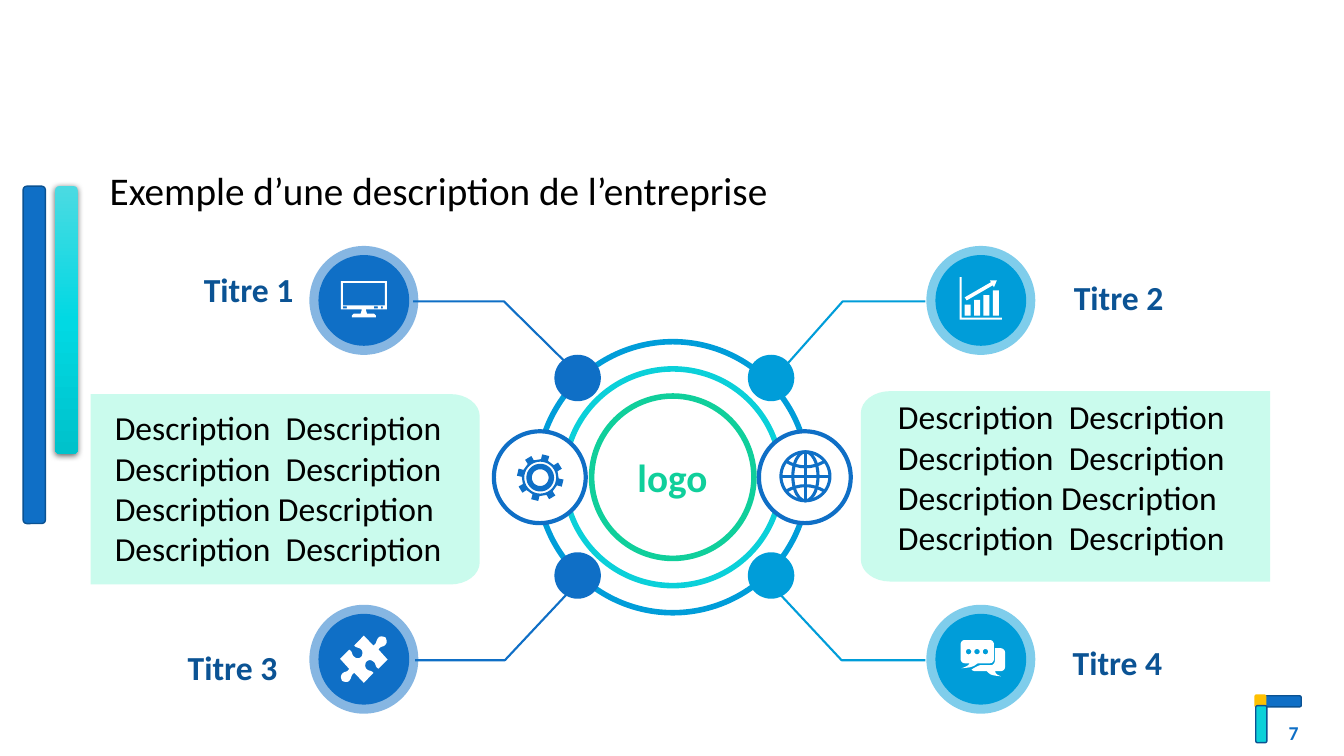
import math

import pptx
import pptx.dml.color
import pptx.enum.shapes
import pptx.enum.text
import pptx.oxml
import pptx.oxml.ns
import pptx.util
import copy

Pt = pptx.util.Pt
KIND = pptx.enum.shapes.MSO_SHAPE
ALIGN = pptx.enum.text.PP_ALIGN
ANCHOR = pptx.enum.text.MSO_ANCHOR
qn = pptx.oxml.ns.qn

BLUE, SKY, TEAL, GREEN = "0F6FC6", "009DD9", "0BD0D9", "10CF9B"
WHITE, BLACK, NAVY, MINT, EDGE = "FFFFFF", "000000", "0B5394", "CAFBED", "0B5292"

# Icon outlines: a pair is a corner, six numbers are a Bezier curve.
FRONT = [(-11.5, -13.7), (6.5, -13.7), (8.1, -13.7, 9.4, -12.3, 9.4, -10.5),
         (9.4, -0.2), (9.4, 1.6, 8.1, 2.9, 6.5, 2.9), (-2.2, 2.9),
         (-5.8, 5.8, -7.2, 5.8, -13.7, 6.5), (-10.1, 5, -9.4, 5, -7.9, 2.9),
         (-11.5, 2.9), (-13.1, 2.9, -14.4, 1.6, -14.4, -0.2), (-14.4, -10.5),
         (-14.4, -12.3, -13.1, -13.7, -11.5, -13.7)]
BACK = [(10.1, -7.9), (13.7, -7.9), (15.8, -7.9, 17.3, -6.5, 17.3, -5),
        (17.3, 5.8), (17.3, 7.2, 15.8, 8.6, 13.7, 8.6), (10.1, 8.6),
        (10.8, 10.1, 10.8, 10.8, 14.4, 12.2), (7.9, 11.5, 7.2, 11.5, 4.3, 8.6),
        (-3.6, 8.6), (-5, 8.6, -6.5, 7.9, -6.5, 7.2),
        (-5, 6.5, -2.9, 5, -0.7, 4.3), (7.2, 4.3),
        (8.6, 4.3, 10.1, 2.9, 10.1, 0.7)]
HALF = [(15.5, -15.5), (16.2, -14, 17, -12, 15.5, -10.5),
        (14, -8.3, 11.9, -9.8, 10.5, -6.9), (17, 0.3), (10.5, 6.8),
        (7.6, 5.4, 9, 3.2, 6.9, 1.8), (5.4, 0.3, 3.3, 0.3, 1.8, 1.8),
        (1.1, 2.5, 0.4, 5.4, 1.8, 6.8), (4, 9, 4.7, 7.5, 6.9, 9.7),
        (0, 16.9), (-6.8, 9.7), (-9.7, 11.8, -8.2, 12.6, -10.4, 15.4),
        (-11.8, 16.9, -14, 16.2, -15.5, 15.5)]
AXES = [(-15.1, -16.6), (-13.7, -16.6), (-13.7, 12.2), (15.1, 12.2),
        (15.1, 13.7), (-15.1, 13.7)]
ARROW = [(6.5, -14.4), (11.5, -14.4), (9.4, -9.4), (8.6, -10.8),
         (-10.1, 0), (-11.5, -2.2), (7.2, -13)]
SIDE = [(16.4, -13.7), (16.4, 6.5), (1.4, 6.5), (2.2, 9.4), (7.2, 9.4),
        (8.6, 10.8), (8.6, 12.2)]


def rgb(code):
    return pptx.dml.color.RGBColor.from_string(code)


def paint(shape, fill=None, line=None, width=1):
    shape.shadow.inherit = False
    if fill:
        shape.fill.solid()
        shape.fill.fore_color.rgb = rgb(fill)
    else:
        shape.fill.background()
    if line:
        shape.line.color.rgb = rgb(line)
        shape.line.width = Pt(width)
    else:
        shape.line.fill.background()
    return shape


def block(slide, kind, x, y, w, h, *look):
    shape = slide.shapes.add_shape(kind, Pt(x), Pt(y), Pt(w), Pt(h))
    return paint(shape, *look)


def disc(slide, x, y, r, *look):
    return block(slide, KIND.OVAL, x - r, y - r, 2 * r, 2 * r, *look)


def flat(path):
    """Turn corners and curves into plain points."""
    points = []
    for step in path:
        if len(step) == 2:
            points.append(step)
            continue
        hull = [points[-1], step[:2], step[2:4], step[4:]]
        for t in (n / 8 for n in range(1, 9)):
            parts = [math.comb(3, k) * t**k * (1 - t)**(3 - k) for k in range(4)]
            points.append(tuple(sum(f * p[i] for f, p in zip(parts, hull))
                                for i in (0, 1)))
    return points


def draw(slide, x, y, paths, *look, close=True):
    """Draw paths as one shape, with (x, y) as their zero point."""
    pen = None
    for path in paths:
        points = [(Pt(x + a), Pt(y + b)) for a, b in flat(path)]
        if pen is None:
            pen = slide.shapes.build_freeform(*points[0], scale=1.0)
        else:
            pen.move_to(*points[0])
        pen.add_line_segments(points[1:], close=close)
    return paint(pen.convert_to_shape(), *look)


def box(x, y, w, h):
    return [(x, y), (x + w, y), (x + w, y + h), (x, y + h)]


def loop(x, y, r):
    turns = [math.tau * n / 36 for n in range(36)]
    return [(x + r * math.cos(t), y + r * math.sin(t)) for t in turns]


def write(slide, x, y, w, h, lines, size, color=BLACK, bold=False,
          align=ALIGN.LEFT, anchor=ANCHOR.TOP):
    frame = slide.shapes.add_textbox(Pt(x), Pt(y), Pt(w), Pt(h)).text_frame
    frame.word_wrap = True
    frame.vertical_anchor = anchor
    for n, line in enumerate(lines):
        para = frame.add_paragraph() if n else frame.paragraphs[0]
        para.alignment = align
        run = para.add_run()
        run.text = line
        font = run.font
        font.name, font.size, font.bold = "Calibri", Pt(size), bold
        font.color.rgb = rgb(color)
    return frame


def fade(shape):
    """Give the side bar its three-stop gradient and soft shadow."""
    shape.fill.gradient()
    shape.fill.gradient_angle = 270
    stops = shape.fill.gradient_stops
    first = shape.element.spPr.find(".//" + qn("a:gs"))
    first.addnext(copy.deepcopy(first))
    stops = shape.fill.gradient_stops
    for stop, place, color in zip(stops, (0, 0.5, 1), ("4BDAE2", "01D9E3", "00C2CB")):
        stop.position = place
        stop.color.rgb = rgb(color)
    shade = pptx.oxml.parse_xml(
        '<a:outerShdw xmlns:a="http://schemas.openxmlformats.org/drawingml/2006/main"'
        ' blurRad="57150" dist="19050" dir="5400000" rotWithShape="0">'
        '<a:srgbClr val="000000"><a:alpha val="63000"/></a:srgbClr></a:outerShdw>')
    shape.element.spPr.find(qn("a:effectLst")).append(shade)


def badge(slide, x, y, color):
    halo = disc(slide, x, y, 38.9, color)
    tint = halo.element.spPr.find(".//" + qn("a:srgbClr"))
    tint.append(tint.makeelement(qn("a:alpha"), {"val": "50000"}))
    disc(slide, x, y, 32.4, color)


def panel(slide, edge, end, top):
    """Draw a panel with a square side at edge and a round side at end."""
    low = top + 136
    turn = math.copysign(21, edge - end)
    draw(slide, 0, 0, [[
        (edge, top), (edge, low), (end + turn, low),
        (end + turn * 0.45, low, end, low - 7, end, low - 16), (end, top + 16),
        (end, top + 7, end + turn * 0.45, top, end + turn, top)]], MINT)


def gear(slide, x, y):
    rim = []
    for tooth in range(8):
        for turn, r in ((-11, 13.2), (-9, 16.7), (9, 16.7), (11, 13.2)):
            a = math.radians(13.7 + 45 * tooth + turn)
            rim.append((r * math.sin(a), -r * math.cos(a)))
    draw(slide, x, y, [rim] + [loop(0, 0, r) for r in (11.4, 9.9, 6)], BLUE)


def globe(slide, x, y):
    r = 17.5
    disc(slide, x, y, r, None, BLUE, 2.2)
    block(slide, KIND.OVAL, x - 9, y - r, 18, 2 * r, None, BLUE, 2.2)
    for a, b in ((r, 0), (0, r)):
        rod = slide.shapes.add_connector(
            pptx.enum.shapes.MSO_CONNECTOR.STRAIGHT,
            Pt(x - a), Pt(y - b), Pt(x + a), Pt(y + b))
        rod.line.color.rgb = rgb(BLUE)
        rod.line.width = Pt(2.2)
        props = rod.element.spPr
        props.append(props.makeelement(qn("a:effectLst"), {}))
    arcs = [[(-13.5, s * 10.5), (-5, s * 5.5, 5, s * 5.5, 13.5, s * 10.5)]
            for s in (-1, 1)]
    draw(slide, x, y, arcs, None, BLUE, 2.2, close=False)


def main():
    deck = pptx.Presentation()
    deck.slide_width, deck.slide_height = Pt(960), Pt(540)
    slide = deck.slides.add_slide(deck.slide_layouts[6])

    bar = KIND.ROUNDED_RECTANGLE
    block(slide, bar, 16.5, 133, 16, 241, BLUE, EDGE)
    fade(block(slide, bar, 39.5, 133, 16, 191, TEAL))
    block(slide, bar, 903, 497, 26.5, 8, BLUE, EDGE)
    block(slide, bar, 896, 496, 8.6, 9.4, "FFC000")
    block(slide, bar, 897, 504, 8, 26.5, TEAL, EDGE)

    intro = write(slide, 71.3, 118.8, 866, 379,
                  ["Exemple d’une description de l’entreprise"], 28)
    intro.paragraphs[0].line_spacing = 0.9
    intro.paragraphs[0].space_before = Pt(10)
    write(slide, 718.6, 509, 216, 28.8, ["7"], 14, BLUE, True,
          ALIGN.RIGHT, ANCHOR.MIDDLE)

    for color, link in (
            (BLUE, [(414.7, 269.3), (360, 215.3), (295.2, 215.3)]),
            (SKY, [(551.5, 272.2), (601.9, 215.3), (661, 215.3)]),
            (BLUE, [(414.7, 414), (360.7, 471.6), (296.6, 471.6)]),
            (SKY, [(550.1, 416.9), (601.2, 471.6), (661, 471.6)])):
        draw(slide, 0, 0, [link], None, color, 1.5, close=False)

    mid = 340.9
    for r, color in ((96.8, SKY), (77.4, TEAL), (58, GREEN)):
        disc(slide, 480.6, mid, r, None, color, 4)
    left, right, top, low = 259.9, 700.6, 214.6, 470.9
    for color, dot, x in ((BLUE, 412.6, left), (SKY, 550.8, right)):
        for y in (270, 411.1):
            disc(slide, dot, y, 16.6, color)
        for y in (top, low):
            badge(slide, x, y, color)
    for x in (385.6, 574.9):
        disc(slide, x, mid, 32.8, WHITE, BLUE, 3)

    screen = SIDE + [(-a, b) for a, b in reversed(SIDE)]
    keys = [box(x, 4.3, w, 1.4) for x, w in ((-15, 2.9), (7.2, 2.9), (12.2, 1.4))]
    draw(slide, left, top, [screen, box(-15, -12.5, 30, 16)] + keys, WHITE)
    bars = [box(-11.5 + 6.7 * n, 3 - 3.4 * n, 4.3, 7.8 + 3.4 * n) for n in range(4)]
    draw(slide, right, top, bars + [ARROW, AXES], WHITE)
    piece = HALF + [tuple(-v for v in step) for step in HALF]
    draw(slide, left, low, [piece], WHITE)
    dots = [loop(x, -5.4, 1.9) for x in (-8.7, -2.7, 3.3)]
    draw(slide, right, low, [FRONT, BACK] + dots, WHITE)
    gear(slide, 385.9, 341.2)
    globe(slide, 575.3, 340.2)

    words = ["Description  Description", "Description  Description",
             "Description Description", "Description  Description"]
    for edge, end, y, x, head in ((64.8, 342.7, 281.5, 74.9, 287.3),
                                  (907.2, 614.9, 279.4, 634.3, 279.4)):
        panel(slide, edge, end, y)
        write(slide, x, head, 251.3, 123.8, words, 24)

    write(slide, 427, 320.4, 106.6, 41, ["logo"], 28, GREEN, True,
          ALIGN.CENTER, ANCHOR.MIDDLE)
    spots = ((68.4, 188.6), (689.8, 194.4), (56.9, 458.6), (689, 455))
    for n, (x, y) in enumerate(spots, 1):
        write(slide, x, y, 148.3, 36, [f"Titre {n}"], 24, NAVY, True,
              ALIGN.RIGHT, ANCHOR.MIDDLE)

    deck.save("out.pptx")


if __name__ == "__main__":
    main()
